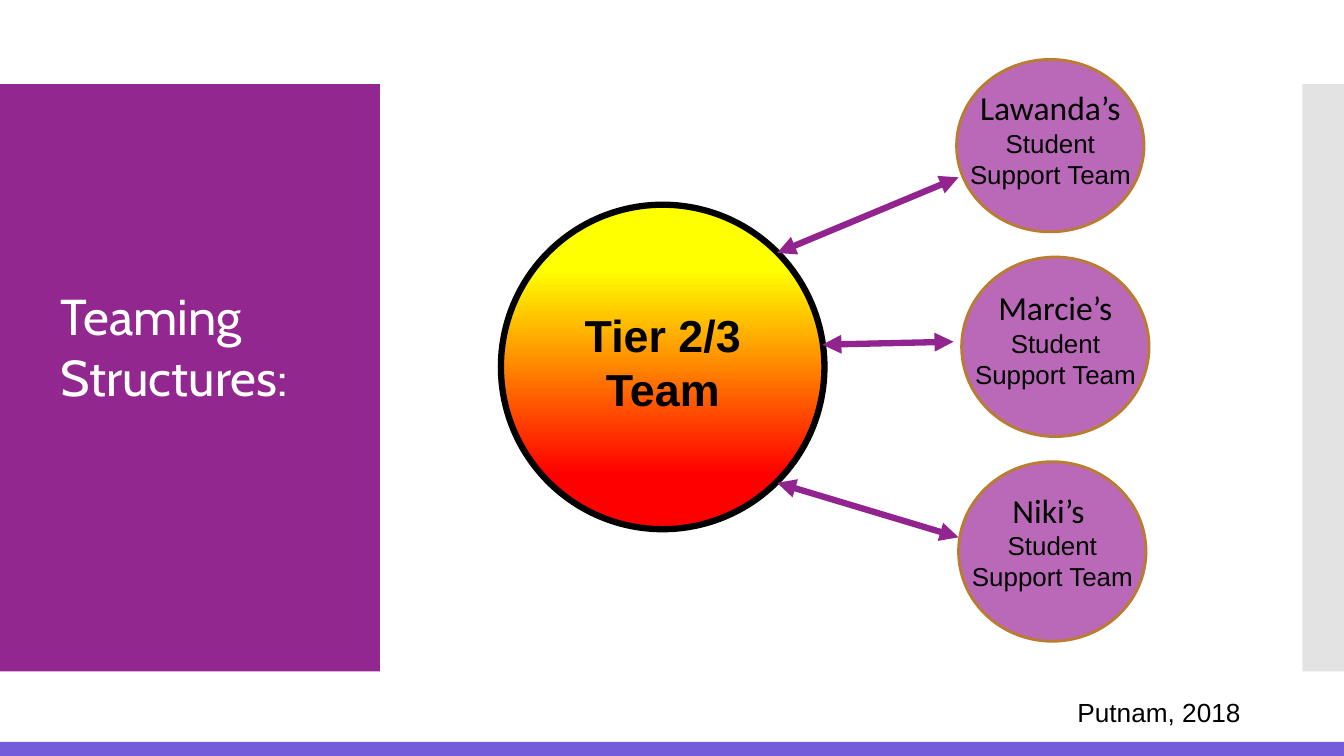
from lxml import etree
from pptx import Presentation
from pptx.dml.color import RGBColor
from pptx.enum.shapes import MSO_CONNECTOR, MSO_SHAPE
from pptx.enum.text import MSO_ANCHOR, MSO_AUTO_SIZE, PP_ALIGN
from pptx.oxml.ns import qn
from pptx.util import Pt

RECTANGLE, OVAL = MSO_SHAPE.RECTANGLE, MSO_SHAPE.OVAL
STRAIGHT = MSO_CONNECTOR.STRAIGHT
TOP, NO_AUTOFIT = MSO_ANCHOR.TOP, MSO_AUTO_SIZE.NONE
LEFT, CENTER = PP_ALIGN.LEFT, PP_ALIGN.CENTER
TITLE_ONLY = 5

COLORS = {
    "panel": "92278F",
    "edge": "C8C8C8",
    "footer": "755DD9",
    "student": "BA69B8",
    "student outline": "BA7C2E",
    "arrow": "91248E",
    "tier top": "FFFF00",
    "tier bottom": "FF0000",
    "black": "000000",
    "white": "FFFFFF",
}


def rgb(name):
    return RGBColor.from_string(COLORS[name])


class TeamSlide:
    def __init__(self, slide):
        self.slide = slide

    def place(self, item, box):
        item.left, item.top, item.width, item.height = map(Pt, box)

    def shape(self, kind, box, fill=None, outline=None, weight=0):
        item = self.slide.shapes.add_shape(kind, *map(Pt, box))
        item.shadow.inherit = False
        if fill:
            item.fill.solid()
            item.fill.fore_color.rgb = rgb(fill)
        if outline:
            item.line.color.rgb = rgb(outline)
            item.line.width = Pt(weight)
        else:
            item.line.fill.background()
        return item

    def fade(self, item, percent):
        """Make a solid fill opaque only to the given percentage."""
        color = item.fill._xPr.find(qn("a:solidFill"))[0]
        etree.SubElement(color, qn("a:alpha"), val=str(percent * 1000))

    def tier_circle(self, box):
        circle = self.shape(OVAL, box, outline="black", weight=4.5)
        circle.fill.gradient()
        circle.fill.gradient_angle = 270
        stops = zip(circle.fill.gradient_stops,
                    ((0.2, "tier top"), (0.83, "tier bottom")))
        for stop, (position, color) in stops:
            stop.position = position
            stop.color.rgb = rgb(color)

    def frame(self, item, side, upright):
        frame = item.text_frame
        frame.word_wrap = True
        frame.auto_size = NO_AUTOFIT
        frame.vertical_anchor = TOP
        frame.margin_left = frame.margin_right = Pt(side)
        frame.margin_top = frame.margin_bottom = Pt(upright)
        return frame

    def style(self, run, font, size, color="black", bold=False):
        run.font.name = font
        run.font.size = Pt(size)
        run.font.color.rgb = rgb(color)
        run.font.bold = bold

    def title(self, text, box):
        title = self.slide.shapes.title
        self.place(title, box)
        frame = self.frame(title, 9.3, 9.3)
        frame.text = text
        frame.paragraphs[0].alignment = LEFT
        self.style(frame.paragraphs[0].runs[0], "Cabin", 36, "white")

    def text(self, parts, box, align=CENTER):
        """Write one paragraph from (text, font, size, bold) parts."""
        label = self.slide.shapes.add_textbox(*map(Pt, box))
        paragraph = self.frame(label, 9.3, 4.8).paragraphs[0]
        paragraph.alignment = align
        for words, font, size, bold in parts:
            run = paragraph.add_run()
            run.text = words
            self.style(run, font, size, bold=bold)

    def student_team(self, name, left, top, height, text_top):
        width = 133.9
        self.shape(OVAL, (left, top, width, height), "student", "student outline", 2)
        self.text([(name, "Calibri", 24, False),
                   (" Student Support Team", "Arial", 18.5, False)],
                  (left, text_top, width, 94))

    def double_arrow(self, start, end):
        arrow = self.slide.shapes.add_connector(STRAIGHT, *map(Pt, start + end))
        arrow.line.color.rgb = rgb("arrow")
        arrow.line.width = Pt(4.5)
        line = arrow.line._get_or_add_ln()
        for tip in ("a:headEnd", "a:tailEnd"):
            etree.SubElement(line, qn(tip), type="triangle")
        etree.SubElement(arrow._element.spPr, qn("a:effectLst"))


def main():
    deck = Presentation()
    deck.slide_width, deck.slide_height = Pt(960), Pt(540)
    page = TeamSlide(deck.slides.add_slide(deck.slide_layouts[TITLE_ONLY]))

    page.shape(RECTANGLE, (0, 60, 271.4, 419.5), "panel")
    edge = page.shape(RECTANGLE, (930.2, 60, 29.8, 419.5), "edge")
    page.fade(edge, 50)
    page.shape(RECTANGLE, (0, 530, 960, 10), "footer")

    # The panel would cover the title, so the title moves to the front.
    title = page.slide.shapes.title._element
    title.getparent().append(title)
    page.title("Teaming Structures:", (34, 194.4, 190.8, 126))

    page.tier_circle((357.8, 146.2, 231.1, 231.8))
    page.text([("Tier 2/3 Team", "Arial", 32, True)], (394.6, 215.3, 157.7, 60.5))

    teams = [
        ("Lawanda’s", 683.3, 42.5, 123.1, 57.6),
        ("Marcie’s", 686.9, 183.6, 128.2, 200.2),
        ("Niki’s ", 684.7, 329.8, 128.2, 344.9),
    ]
    for team in teams:
        page.student_team(*team)

    arrows = [
        ((555.1, 180.7), (684.7, 126.7)),
        ((587.5, 246.2), (681.1, 244.1)),
        ((555.1, 344.9), (684.7, 383.8)),
    ]
    for start, end in arrows:
        page.double_arrow(start, end)

    page.text([("Putnam, 2018", "Arial", 18.7, False)],
              (760.3, 492.5, 199.4, 32.4), LEFT)
    deck.save("out.pptx")


if __name__ == "__main__":
    main()
